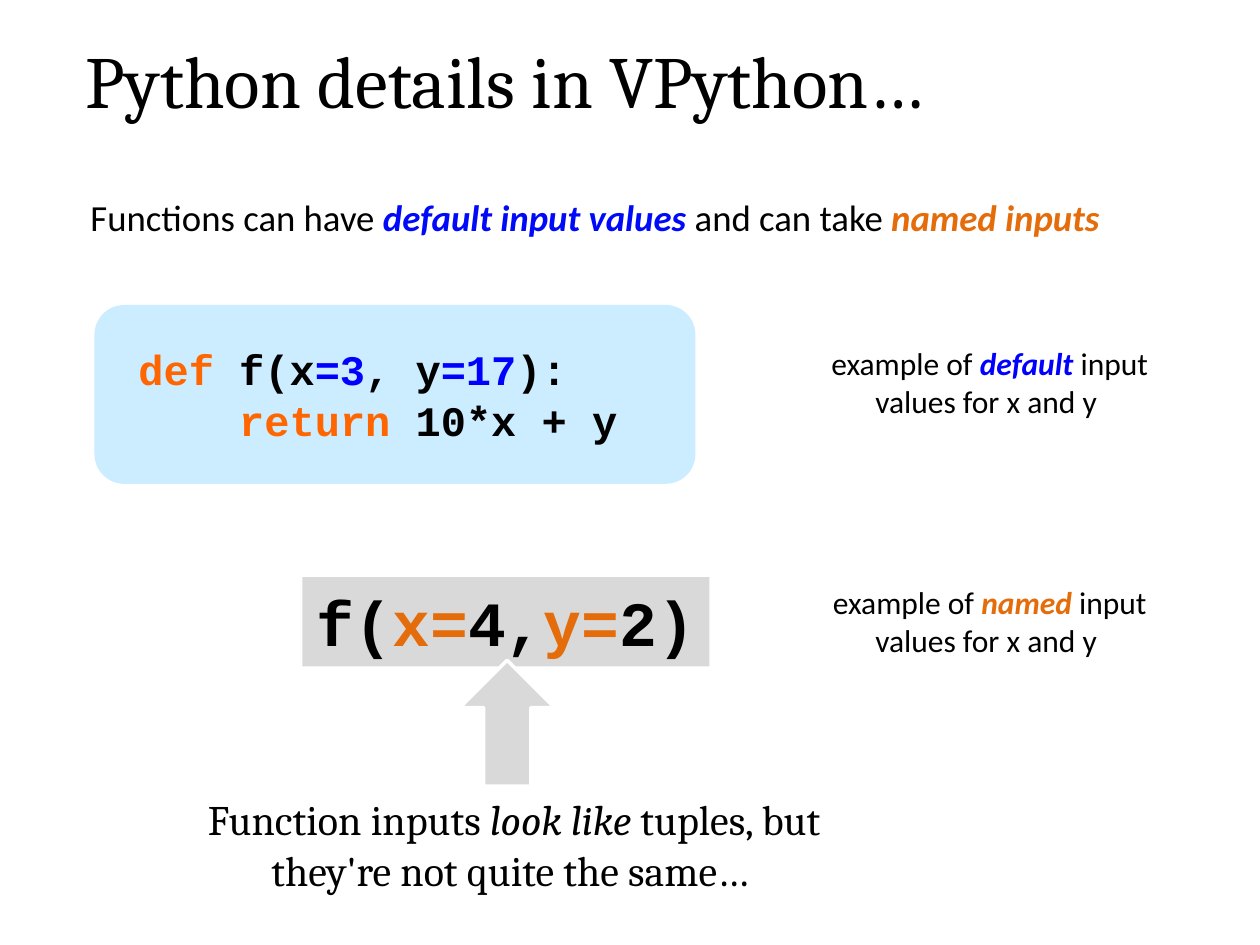
from pptx import Presentation
from pptx import util as u
from pptx.dml.color import RGBColor
from pptx.enum import shapes, text

COLUMNS, ROWS = 40, 30
SLIDE_WIDTH, SLIDE_HEIGHT = u.Inches(10), u.Inches(7.5)

COLOURS = {
    "ink": "000000",
    "default": "0000FF",
    "emphasis": "000AF9",
    "named": "E46C0A",
    "keyword": "FF6600",
    "panel": "CCECFF",
    "grey": "D9D9D9",
    "white": "FFFFFF",
}


def colour(name):
    return RGBColor.from_string(COLOURS[name])


def cells(column, row, columns, rows):
    """Turn a grid area into left, top, width and height."""
    return (
        round(column * SLIDE_WIDTH / COLUMNS),
        round(row * SLIDE_HEIGHT / ROWS),
        round(columns * SLIDE_WIDTH / COLUMNS),
        round(rows * SLIDE_HEIGHT / ROWS),
    )


def write(frame, lines, font, size, align=text.PP_ALIGN.LEFT, wrap=True):
    """Fill a frame with lines of (words, colour name, style letters) runs."""
    frame.word_wrap = wrap
    frame.auto_size = text.MSO_AUTO_SIZE.NONE
    frame.vertical_anchor = text.MSO_ANCHOR.TOP
    for index, line in enumerate(lines):
        paragraph = frame.add_paragraph() if index else frame.paragraphs[0]
        paragraph.alignment = align
        for words, ink, style in line:
            run = paragraph.add_run()
            run.text = words
            run.font.name = font
            run.font.size = u.Pt(size)
            run.font.bold = "b" in style
            run.font.italic = "i" in style
            run.font.color.rgb = colour(ink)


def add_title(slide, area, words):
    title = slide.shapes.title
    title.left, title.top, title.width, title.height = cells(*area)
    write(title.text_frame, [[(words, "ink", "")]], "Cambria", 42)


def add_words(slide, area, lines, font, size, **layout):
    box = slide.shapes.add_textbox(*cells(*area))
    write(box.text_frame, lines, font, size, **layout)


def add_block(slide, kind, area, fill):
    block = slide.shapes.add_shape(kind, *cells(*area))
    block.shadow.inherit = False
    block.fill.solid()
    block.fill.fore_color.rgb = colour(fill)
    block.line.fill.background()
    return block


def add_caption(slide, row, term, ink):
    line = [
        ("example of ", "ink", ""),
        (term, ink, "bi"),
        (" input values for x and y ", "ink", ""),
    ]
    add_words(slide, (25, row, 12.84, 2.84), [line], "Calibri", 18,
              align=text.PP_ALIGN.CENTER)


def add_definition(slide):
    add_block(slide, shapes.MSO_SHAPE.ROUNDED_RECTANGLE,
              (3, 9.68, 19.08, 5.68), "panel")
    code = [
        [("def ", "keyword", "b"), ("f(x", "ink", "b"), ("=3", "default", "b"),
         (", y", "ink", "b"), ("=17", "default", "b"), ("):", "ink", "b")],
        [("    return ", "keyword", "b"), ("10*x + y", "ink", "b")],
    ]
    add_words(slide, (4, 10.72, 16.92, 3.64), code, "Courier New", 24, wrap=False)


def add_call(slide):
    call = add_block(slide, shapes.MSO_SHAPE.RECTANGLE,
                     (9.6, 18.32, 12.92, 2.84), "grey")
    code = [("f(", "ink", "b"), ("x=", "named", "b"), ("4,", "ink", "b"),
            ("y=", "named", "b"), ("2)", "ink", "b")]
    write(call.text_frame, [code], "Courier New", 36,
          align=text.PP_ALIGN.CENTER, wrap=False)


def add_arrow(slide):
    arrow = add_block(slide, shapes.MSO_SHAPE.DOWN_ARROW,
                      (14.6, 20.96, 3, 4), "grey")
    arrow.rotation = 180
    arrow.line.color.rgb = colour("white")
    arrow.line.width = u.Pt(2)


def main():
    deck = Presentation()
    deck.slide_width, deck.slide_height = SLIDE_WIDTH, SLIDE_HEIGHT
    slide = deck.slides.add_slide(deck.slide_layouts.get_by_name("Title Only"))

    add_title(slide, (2.32, 0.92, 30.68, 3.24), "Python details in VPython…")
    summary = [
        ("Functions can have ", "ink", ""),
        ("default input values ", "emphasis", "bi"),
        ("and can take ", "ink", ""),
        ("named inputs", "named", "bi"),
    ]
    add_words(slide, (2.48, 6, 36.52, 1.8), [summary], "Calibri", 21)
    add_definition(slide)
    add_caption(slide, 10.72, "default", "default")
    add_call(slide)
    add_caption(slide, 18.32, "named", "named")
    add_arrow(slide)
    remark = [
        ("Function inputs ", "ink", ""),
        ("look like ", "ink", "i"),
        ("tuples, but they're not quite the same… ", "ink", ""),
    ]
    add_words(slide, (6, 25, 20.64, 3.64), [remark], "Cambria", 24,
              align=text.PP_ALIGN.CENTER)
    deck.save("out.pptx")


if __name__ == "__main__":
    main()
